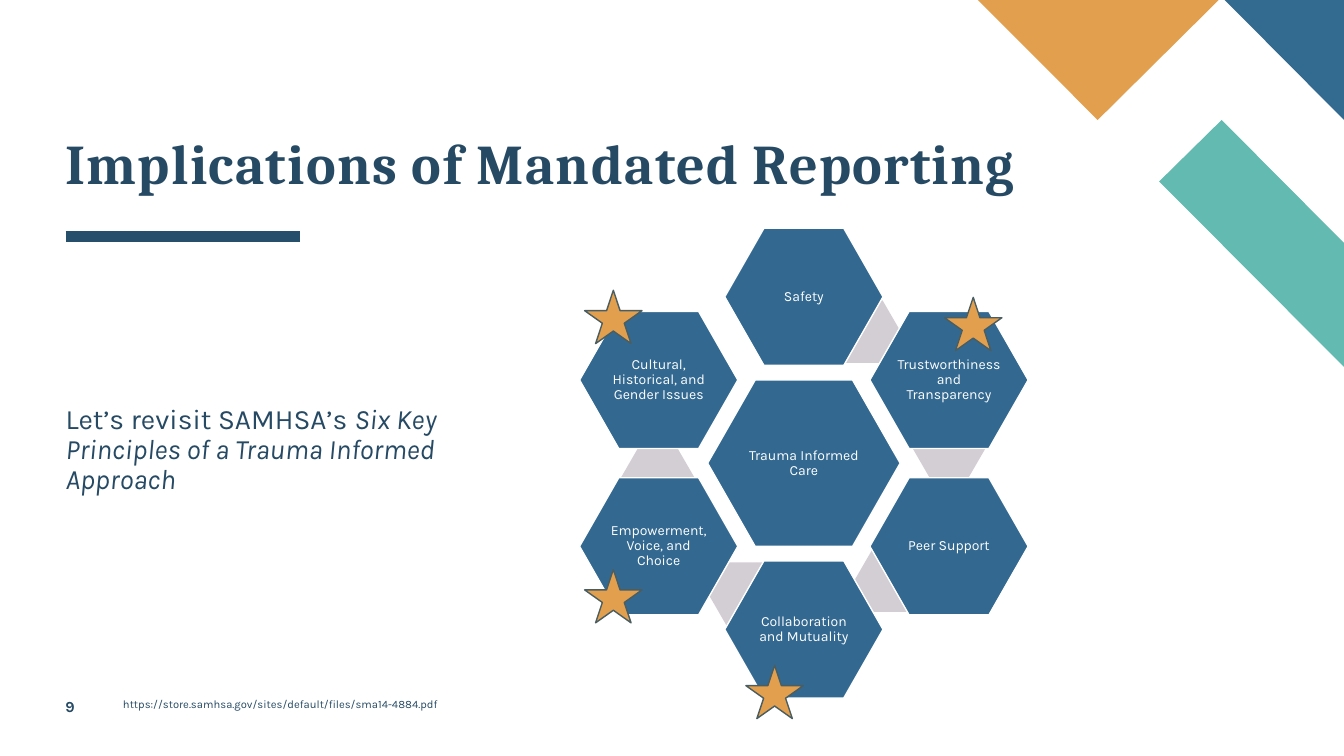
from dataclasses import dataclass

from lxml.etree import SubElement
from pptx import Presentation
from pptx.dml.color import RGBColor
from pptx.enum.shapes import MSO_CONNECTOR, MSO_SHAPE
from pptx.enum.text import MSO_ANCHOR, PP_ALIGN
from pptx.oxml.ns import qn
from pptx.util import Inches, Pt

ROWS = 75
COLUMNS = 133.33
CELL = Inches(7.5) / ROWS


@dataclass(frozen=True)
class Theme:
    ink: str = "264A64"
    rule: str = "264F6C"
    blue: str = "336A90"
    hexagon: str = "336990"
    teal: str = "63BAB0"
    gold: str = "E29F4D"
    star_edge: str = "4A5D60"
    link: str = "D3CDD4"
    white: str = "FFFFFF"
    heading_font: str = "Cambria"
    body_font: str = "Karla"
    title_size: int = 40
    body_size: int = 20
    number_size: int = 11
    label_size: int = 10
    source_size: int = 8


THEME = Theme()


@dataclass(frozen=True)
class Box:
    """An area in grid cells."""
    left: float
    top: float
    width: float
    height: float

    def emu(self):
        return [cells(n) for n in (self.left, self.top, self.width, self.height)]

    def centered(self, dx, dy, width, height):
        """A box whose middle lies dx, dy from the middle of this one."""
        return Box(self.left + (self.width - width) / 2 + dx,
                   self.top + (self.height - height) / 2 + dy, width, height)


def cells(count):
    return round(count * CELL)


def write(shape, *spans, size, font=THEME.body_font, color=THEME.ink, bold=False,
          align=PP_ALIGN.LEFT, anchor=MSO_ANCHOR.TOP, insets=(0, 0.5, 1, 0.5),
          line_spacing=0.9, tracking=None):
    """Fill one paragraph; each span is a (text, italic) pair."""
    frame = shape.text_frame
    frame.word_wrap = True
    frame.vertical_anchor = anchor
    (frame.margin_left, frame.margin_top,
     frame.margin_right, frame.margin_bottom) = map(cells, insets)
    para = frame.paragraphs[0]
    para.alignment = align
    para.line_spacing = line_spacing
    for text, italic in spans:
        span = para.add_run()
        span.text = text
        span.font.name = font
        span.font.size = Pt(size)
        span.font.bold = bold
        span.font.italic = italic
        span.font.color.rgb = RGBColor.from_string(color)
        if tracking:
            span.font._element.set("spc", str(tracking * 100))


def paint(shape, fill, edge=None):
    shape.shadow.inherit = False
    shape.fill.solid()
    shape.fill.fore_color.rgb = RGBColor.from_string(fill)
    if edge:
        shape.line.color.rgb = RGBColor.from_string(edge)
        shape.line.width = Pt(1)
    else:
        shape.line.fill.background()


def add_preset(page, kind, box, fill, edge=None, adjustments=()):
    shape = page.shapes.add_shape(kind, *box.emu())
    for index, value in enumerate(adjustments):
        shape.adjustments[index] = value
    paint(shape, fill, edge)
    return shape


def add_text(page, box, *spans, **style):
    write(page.shapes.add_textbox(*box.emu()), *spans, **style)


def add_corner(page, box):
    """Cut diamonds that run off the top right corner."""
    pieces = (
        (THEME.teal, ((1, 36.4), (1, 24.1), (24.2, 11.9), (18, 18))),
        (THEME.blue, ((1, 11.9), (1, 0), (24.5, 0))),
        (THEME.gold, ((0, 0), (11.9, 11.9), (23.9, 0))),
    )
    for fill, points in pieces:
        corners = [(cells(box.left + (box.width if x == 1 else x)), cells(box.top + y))
                   for x, y in points]
        builder = page.shapes.build_freeform(*corners[0], scale=1.0)
        builder.add_line_segments(corners[1:], close=True)
        paint(builder.convert_to_shape(), fill)


def add_heading(page, box):
    add_text(page, box, ("Implications of Mandated Reporting", False),
             size=THEME.title_size, font=THEME.heading_font, bold=True,
             anchor=MSO_ANCHOR.BOTTOM, insets=(0, 0, 0, 0), line_spacing=0.8, tracking=1)
    height = cells(box.top + box.height + 4.1)
    rule = page.shapes.add_connector(MSO_CONNECTOR.STRAIGHT, cells(box.left), height,
                                     cells(box.left + 23.3), height)
    rule.line.color.rgb = RGBColor.from_string(THEME.rule)
    rule.line.width = Pt(8)
    SubElement(rule._element.spPr, qn("a:effectLst"))


def add_principles(page, box):
    """Six hexagons around a larger one, with links between and stars on some."""
    step_x, step_y = 14.4, 8.25
    link_offsets = ((6, -13.05), (14.4, -1.45), (8.6, 11.65), (-5.9, 12.95), (-14.5, 1.35))
    ring = (
        ("Safety", 0, -2),
        ("Trustworthiness and Transparency", 1, -1),
        ("Peer Support", 1, 1),
        ("Collaboration and Mutuality", 0, 2),
        ("Empowerment, Voice, and Choice", -1, 1),
        ("Cultural, Historical, and Gender Issues", -1, -1),
    )
    star_offsets = ((16.8, -13.8), (-18.9, 13.2), (-2.9, 22.7), (-18.9, -14.5))

    def add_node(label, node_box):
        node = add_preset(page, MSO_SHAPE.HEXAGON, node_box, THEME.hexagon,
                          THEME.white, (0.286, 1.155))
        write(node, (label, False), size=THEME.label_size, color=THEME.white,
              align=PP_ALIGN.CENTER, anchor=MSO_ANCHOR.MIDDLE, insets=(0.1,) * 4)

    add_node("Trauma Informed Care", box.centered(0, 0, 19.1, 16.5))
    for dx, dy in link_offsets:
        add_preset(page, MSO_SHAPE.HEXAGON, box.centered(dx, dy, 7.2, 6.2),
                   THEME.link, adjustments=(0.289, 1.155))
    for label, column, row in ring:
        add_node(label, box.centered(column * step_x, row * step_y, 15.7, 13.6))
    for dx, dy in star_offsets:
        add_preset(page, MSO_SHAPE.STAR_5_POINT, box.centered(dx, dy, 5.7, 5.3),
                   THEME.gold, THEME.star_edge)


def add_footer(page, box):
    number_width = 5.7
    add_text(page, Box(box.left, box.top + 0.4, number_width, 2.7), ("9", False),
             size=THEME.number_size, bold=True, insets=(0, 0, 0, 0), line_spacing=1.0)
    add_text(page, Box(box.left + number_width, box.top, box.width - number_width, box.height),
             ("https://store.samhsa.gov/sites/default/files/sma14-4884.pdf", False),
             size=THEME.source_size)


def main():
    deck = Presentation()
    deck.slide_width = cells(COLUMNS)
    deck.slide_height = cells(ROWS)
    page = deck.slides.add_slide(deck.slide_layouts[6])
    add_corner(page, Box(97, 0, COLUMNS - 97, 36.4))
    add_heading(page, Box(6.5, 2.2, 120, 17.2))
    add_text(page, Box(6.5, 39.7, 48.5, 28.9), ("Let’s revisit SAMHSA’s ", False),
             ("Six Key Principles of a Trauma Informed Approach", True),
             size=THEME.body_size)
    add_principles(page, Box(57.5, 22.6, 44.5, 46.7))
    add_footer(page, Box(6.5, 68.8, 95.9, 4))
    deck.save("out.pptx")


if __name__ == "__main__":
    main()
